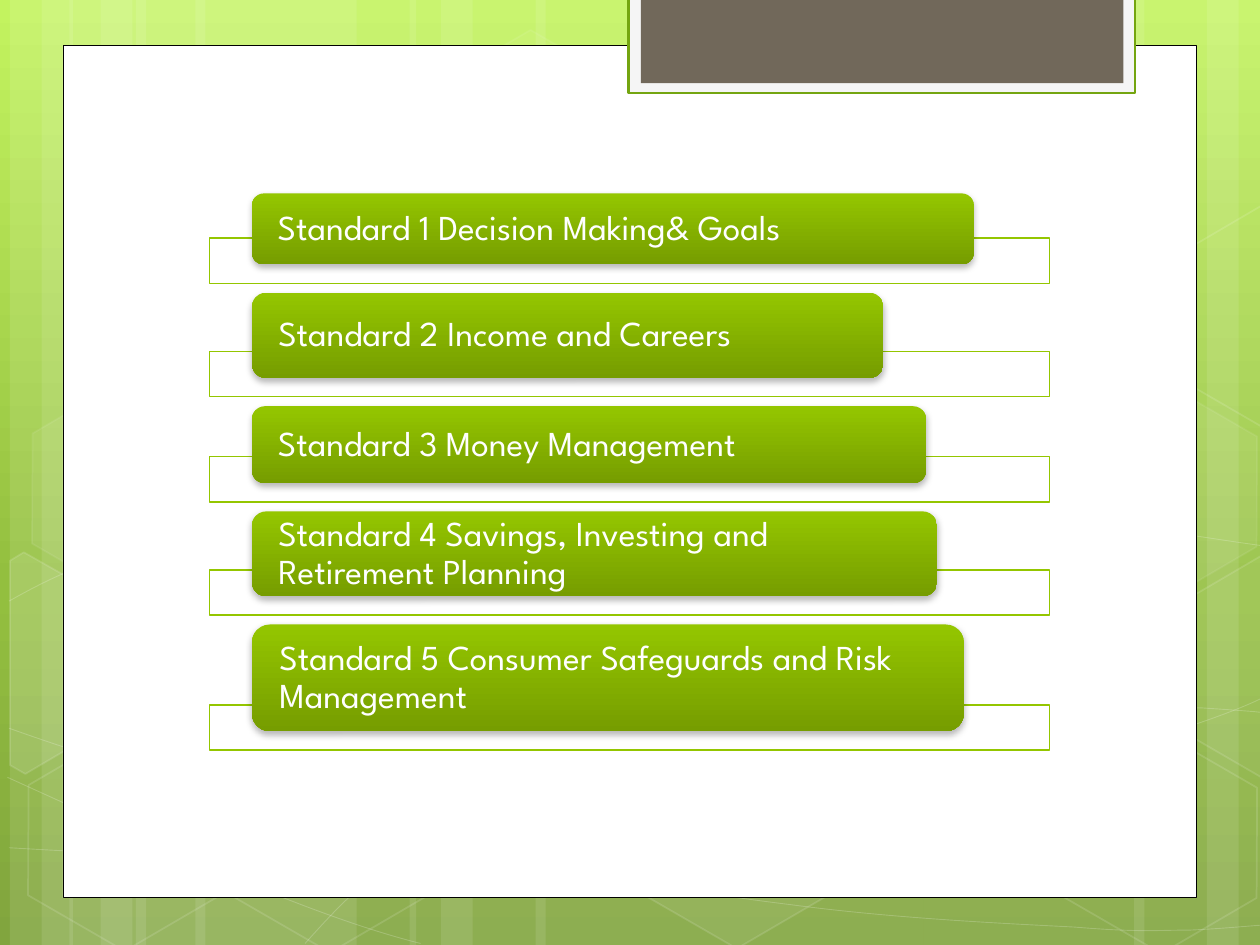
from copy import deepcopy
from math import cos, radians, sin

from lxml import etree
from pptx import Presentation
from pptx.dml.color import RGBColor
from pptx.enum.shapes import MSO_SHAPE
from pptx.enum.text import MSO_ANCHOR, PP_ALIGN
from pptx.oxml.ns import qn
from pptx.util import Cm, Pt

RECT = MSO_SHAPE.RECTANGLE
ROUNDED = MSO_SHAPE.ROUNDED_RECTANGLE
HEXAGON = MSO_SHAPE.HEXAGON
MIDDLE = MSO_ANCHOR.MIDDLE
LEFT = PP_ALIGN.LEFT

WHITE = RGBColor(0xFF, 0xFF, 0xFF)
BLACK = RGBColor(0x00, 0x00, 0x00)
PALE = RGBColor(0xF5, 0xF5, 0xF5)
BROWN = RGBColor(0x71, 0x68, 0x5A)
TAB_GREEN = RGBColor(0x74, 0xA5, 0x10)
GREEN = RGBColor(0x94, 0xC6, 0x00)
DARK_GREEN = RGBColor(0x76, 0x9D, 0x00)
BACKGROUND = [
    (0, RGBColor(0xC3, 0xF3, 0x5F)),
    (0.62, RGBColor(0x93, 0xBF, 0x3F)),
    (1, RGBColor(0x81, 0xA5, 0x3E)),
]


def paint(sp, fill=None, alpha=100, line=None, width=1, line_alpha=100):
    """Set fill and line, with opacities in percent, and drop the shadow."""
    sp.shadow.inherit = False
    for fmt, color, opacity, parent in (
        (sp.fill, fill, alpha, ""),
        (sp.line.fill, line, line_alpha, "a:ln/"),
    ):
        if color is None:
            fmt.background()
            continue
        fmt.solid()
        fmt.fore_color.rgb = color
        if opacity < 100:
            clr = sp.element.spPr.xpath(parent + "a:solidFill/a:srgbClr")[0]
            etree.SubElement(clr, qn("a:alpha"), val=str(opacity * 1000))
    if line is not None:
        sp.line.width = Pt(width)


def write(sp, text, size=20, font="League Spartan", color=WHITE, inset=0.45):
    tf = sp.text_frame
    tf.word_wrap = True
    tf.vertical_anchor = MIDDLE
    tf.margin_left = tf.margin_right = Cm(inset)
    tf.margin_top = tf.margin_bottom = 0
    p = tf.paragraphs[0]
    p.alignment = LEFT
    p.line_spacing = 0.9
    r = p.add_run()
    r.text = text
    r.font.size = Pt(size)
    r.font.name = font
    r.font.color.rgb = color


prs = Presentation()
prs.slide_width, prs.slide_height = Cm(25.4), Cm(19.05)
s = prs.slides.add_slide(prs.slide_layouts[6])

# Background gradient, top to bottom
bg = s.background.fill
bg.gradient()
bg.gradient_angle = 270
stop_list = s.element.find(".//" + qn("a:gsLst"))
stop_list.append(deepcopy(stop_list[-1]))
for stop, (position, color) in zip(bg.gradient_stops, BACKGROUND):
    stop.position = position
    stop.color.rgb = color

# Vertical stripes: left, width, rotation
stripes = [
    (2.74, 4.45, 0), (0.2, 1.27, 0), (0.84, 2.11, 0),
    (3.94, 4.45, 0), (1.4, 1.27, 0), (2.03, 2.11, 0),
    (18.62, 4.45, 180), (24.33, 1.27, 180), (22.86, 2.11, 180),
    (10.8, 7.82, 0), (8.26, 1.27, 0), (8.89, 2.11, 0),
]
for left, width, rotation in stripes:
    sp = s.shapes.add_shape(RECT, Cm(left), 0, Cm(width), prs.slide_height)
    sp.rotation = rotation
    paint(sp, WHITE, 10)

# Thin curves: a start point, then three Bezier points per section
curves = [
    [(0.18, 17.09), (1.55, 17.17), (2.92, 17.25), (4.83, 17.22), (6.73, 17.2), (9.09, 17.15),
     (11.63, 16.89), (14.17, 16.64), (17.78, 16.15), (20.12, 15.67), (22.43, 15.19),
     (24.82, 14.43), (25.58, 14)],
    [(0.18, 12.12), (0.91, 11.71), (1.65, 11.33), (3.07, 10.95), (4.52, 10.57), (6.58, 10.01),
     (8.81, 9.83), (11.07, 9.65), (13.82, 9.63), (16.61, 9.83), (19.41, 10.03),
     (24.05, 10.82), (25.58, 11.02)],
    [(0.15, 15.67), (3.23, 17.07), (6.27, 18.47), (8.48, 19.02)],
    [(0.18, 14.68), (0.97, 14.96), (1.78, 15.24), (3.25, 15.65), (4.72, 16.03), (6.93, 16.66),
     (9.07, 17.09), (11.18, 17.53), (13.84, 17.98), (15.95, 18.24), (18.06, 18.52),
     (20.32, 18.62), (21.67, 18.69), (22.99, 18.8), (23.34, 18.75), (24, 18.75),
     (24.66, 18.72), (25.12, 18.67), (25.58, 18.64)],
    [(6.15, 19.02), (6.6, 18.52), (7.06, 18.01), (7.67, 17.55), (8.28, 17.09), (9.14, 16.59),
     (9.86, 16.23), (10.57, 15.88), (11, 15.72), (11.94, 15.47), (12.85, 15.21),
     (14.55, 14.86), (15.44, 14.68), (16.36, 14.5), (16.48, 14.5), (17.27, 14.45),
     (18.06, 14.38), (19.3, 14.3), (20.17, 14.27), (21.06, 14.25), (22.5, 14.27),
     (22.5, 14.27), (23.07, 14.27), (23.64, 14.27), (24.21, 14.27), (24.66, 14.3),
     (25.1, 14.33), (25.32, 14.35), (25.55, 14.38), (25.48, 14.35), (25.55, 14.38)],
]
for curve in curves:
    points = [(Cm(x), Cm(y)) for x, y in curve]
    builder = s.shapes.build_freeform(*points[0])
    builder.add_line_segments(points[1:], close=False)
    sp = builder.convert_to_shape()
    segments = sp.element.spPr.xpath(".//a:lnTo")
    for i in range(0, len(segments), 3):
        bezier = etree.Element(qn("a:cubicBezTo"))
        segments[i].addprevious(bezier)
        for segment in segments[i:i + 3]:
            bezier.append(segment[0])
            segment.getparent().remove(segment)
    paint(sp, line=WHITE, width=0.5, line_alpha=20)

# Hexagons: left, top, fill opacity, line opacity
TILT = 30
hexagons = [
    (8.48, 0.91, 4, 8), (12.62, 14.96, 6, 12), (0.28, 15.01, 0, 12), (0.36, 7.92, 7, 8),
    (4.42, 15.04, 0, 12), (19.13, 11.51, 10, 12), (21.18, 15.06, 0, 12), (21.18, 7.98, 7, 8),
]
for left, top, alpha, line_alpha in hexagons:
    sp = s.shapes.add_shape(HEXAGON, Cm(left), Cm(top), Cm(4.45), Cm(3.86))
    sp.adjustments[0] = 0.285
    sp.rotation = TILT
    paint(sp, WHITE if alpha else None, alpha, WHITE, 1, line_alpha)

# Hexagons cut off at the slide edges: fill opacity, centre, corners after the tilt
cut_hexagons = [
    (10, (0.91, 13.59), [(0.2, 11.3), (0.48, 11.13), (2.44, 12.24), (2.41, 14.48),
                         (0.51, 15.6), (0.2, 15.42)]),
    (4, (25.02, 13.21), [(23.52, 12.32), (25.43, 11.2), (25.63, 11.33), (25.63, 15.57),
                         (25.45, 15.67), (23.52, 14.55)]),
    (0, (25.02, 6.12), [(23.52, 5.26), (25.43, 4.14), (25.65, 4.27), (25.63, 8.51),
                        (25.45, 8.61), (23.52, 7.49)]),
]
c, n = cos(radians(TILT)), sin(radians(TILT))
for alpha, (cx, cy), corners in cut_hexagons:
    points = [(Cm(cx + (x - cx) * c + (y - cy) * n), Cm(cy - (x - cx) * n + (y - cy) * c))
              for x, y in corners]
    builder = s.shapes.build_freeform(*points[0])
    builder.add_line_segments(points[1:], close=True)
    sp = builder.convert_to_shape()
    sp.rotation = TILT
    paint(sp, WHITE if alpha else None, alpha, WHITE, 1, 12)

# Page panel and the tab at its top
panels = [
    ((1.27, 0.91, 22.86, 17.19), WHITE, BLACK, 0.5),
    ((12.67, -0.05, 10.21, 1.93), PALE, TAB_GREEN, 1.25),
    ((12.92, -0.05, 9.73, 1.73), BROWN, None, 0),
]
for place, fill, line, width in panels:
    sp = s.shapes.add_shape(RECT, *map(Cm, place))
    paint(sp, fill, line=line, width=width)

# Standards: text, bar width, bar height
standards = [
    ("Standard 1 Decision Making& Goals", 14.55, 1.43),
    ("Standard 2 Income and Careers", 12.73, 1.72),
    ("Standard 3 Money Management", 13.59, 1.55),
    ("Standard 4 Savings, Investing and Retirement Planning", 13.81, 1.71),
    ("Standard 5 Consumer Safeguards and Risk Management", 14.35, 2.15),
]
GAP = 0.57
top = 3.9
for text, width, height in standards:
    frame = s.shapes.add_shape(RECT, Cm(4.23), Cm(top + height - 0.53), Cm(16.93), Cm(0.91))
    paint(frame, WHITE, 90, GREEN, 0.75)

    bar = s.shapes.add_shape(ROUNDED, Cm(5.08), Cm(top), Cm(width), Cm(height))
    paint(bar)
    bar.fill.gradient()
    bar.fill.gradient_angle = 270
    for stop, color in zip(bar.fill.gradient_stops, (GREEN, DARK_GREEN)):
        stop.color.rgb = color
    effects = bar.element.spPr.find(qn("a:effectLst"))
    shadow = etree.SubElement(effects, qn("a:outerShdw"), blurRad=str(Pt(4)), dist=str(Pt(2)),
                              dir="5400000", rotWithShape="0")
    clr = etree.SubElement(shadow, qn("a:srgbClr"), val=str(BLACK))
    etree.SubElement(clr, qn("a:alpha"), val="28000")
    write(bar, text)
    top += height + GAP

prs.save("out.pptx")
